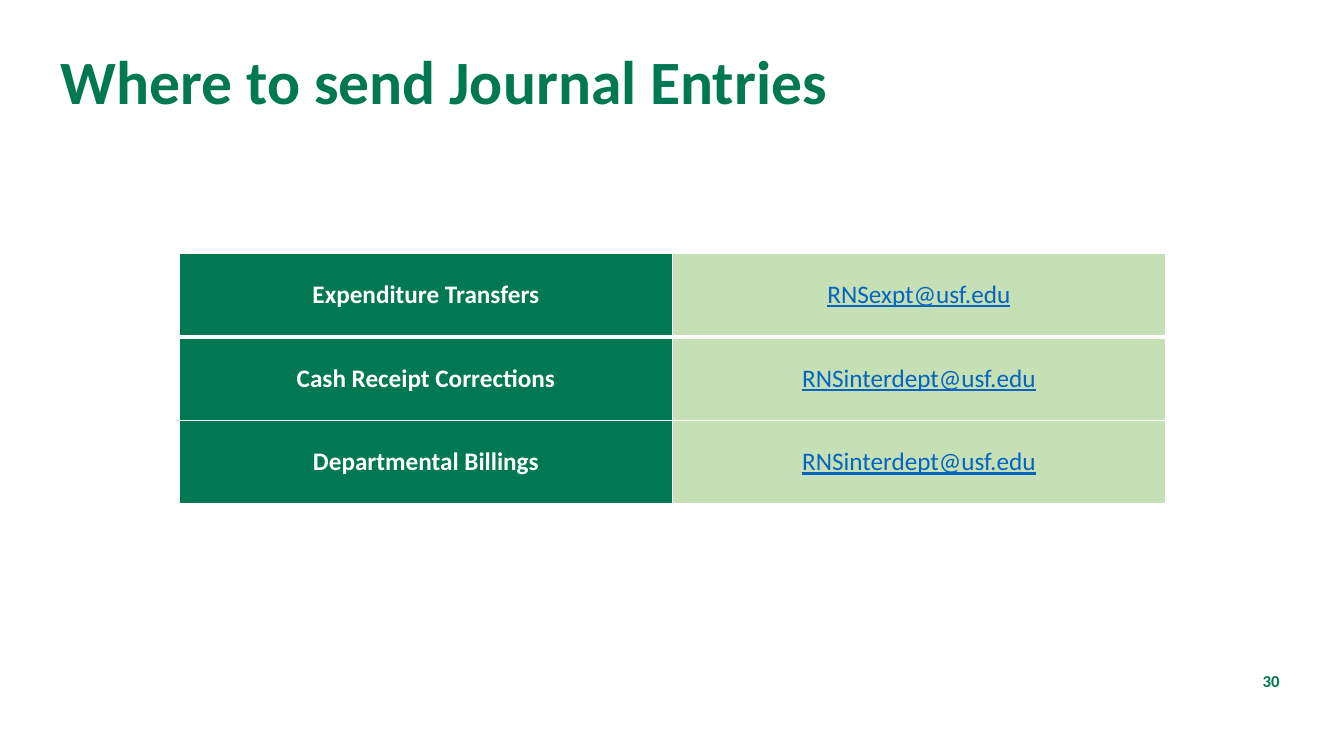
import pptx
import pptx.dml.color
import pptx.enum.text
import pptx.oxml
import pptx.oxml.ns
import pptx.util
from pptx.util import Inches

GREEN, PALE_GREEN, WHITE, LINK_BLUE = "007851", "C5E0B4", "FFFFFF", "0563C1"
ALIGN = pptx.enum.text.PP_ALIGN
ANCHOR = pptx.enum.text.MSO_ANCHOR

CONTACTS = [
    ("Expenditure Transfers", "RNSexpt@usf.edu"),
    ("Cash Receipt Corrections", "RNSinterdept@usf.edu"),
    ("Departmental Billings", "RNSinterdept@usf.edu"),
]


def color(value):
    return pptx.dml.color.RGBColor.from_string(value)


def add_span(para, text, size, ink, bold=True, underline=False):
    span = para.add_run()
    span.text = text
    span.font.name = "Calibri"
    span.font.size = pptx.util.Pt(size)
    span.font.color.rgb = color(ink)
    span.font.bold = bold
    span.font.underline = underline


def add_label(page, left, top, width, height, text, size, align, anchor, spacing=1.0):
    box = page.shapes.add_textbox(Inches(left), Inches(top), Inches(width), Inches(height))
    box.text_frame.word_wrap = True
    box.text_frame.vertical_anchor = anchor
    para = box.text_frame.paragraphs[0]
    para.alignment = align
    para.line_spacing = spacing
    add_span(para, text, size, GREEN)


def set_borders(cell, top, bottom):
    """Give a cell white borders, with top and bottom widths in points."""
    properties = cell._tc.get_or_add_tcPr()
    widths = {"lnL": 1, "lnR": 1, "lnT": top, "lnB": bottom}
    for position, (side, width) in enumerate(widths.items()):
        properties.insert(position, pptx.oxml.parse_xml(
            f'<a:{side} {pptx.oxml.ns.nsdecls("a")} w="{pptx.util.Pt(width)}">'
            f'<a:solidFill><a:srgbClr val="{WHITE}"/></a:solidFill></a:{side}>'))


def fill_cell(cell, text, fill, ink, bold, underline):
    cell.fill.solid()
    cell.fill.fore_color.rgb = color(fill)
    cell.vertical_anchor = ANCHOR.MIDDLE
    para = cell.text_frame.paragraphs[0]
    para.alignment = ALIGN.CENTER
    add_span(para, text, 18, ink, bold, underline)


def add_contact_table(page):
    frame = page.shapes.add_table(len(CONTACTS), 2, Inches(1.78), Inches(2.51),
                                  Inches(9.78), Inches(2.49))
    table = frame.table
    for column in table.columns:
        column.width = Inches(4.89)
    for index, (entry, address) in enumerate(CONTACTS):
        table.rows[index].height = Inches(0.83)
        entry_cell, address_cell = table.cell(index, 0), table.cell(index, 1)
        fill_cell(entry_cell, entry, GREEN, WHITE, True, False)
        fill_cell(address_cell, address, PALE_GREEN, LINK_BLUE, False, True)
        # A thicker rule sits below the first row
        for cell in (entry_cell, address_cell):
            set_borders(cell, 3 if index == 1 else 1, 3 if index == 0 else 1)


def main():
    deck = pptx.Presentation()
    deck.slide_width, deck.slide_height = Inches(13.33), Inches(7.5)
    page = deck.slides.add_slide(deck.slide_layouts[6])

    # Title
    add_label(page, 0.5, 0.46, 12.29, 0.85, "Where to send Journal Entries", 44,
              ALIGN.LEFT, ANCHOR.TOP, 0.9)
    # Slide number
    add_label(page, 11.86, 6.61, 0.93, 0.29, "30", 12, ALIGN.RIGHT, ANCHOR.MIDDLE)
    # Journal entry types and their addresses
    add_contact_table(page)

    deck.save("out.pptx")


if __name__ == "__main__":
    main()
